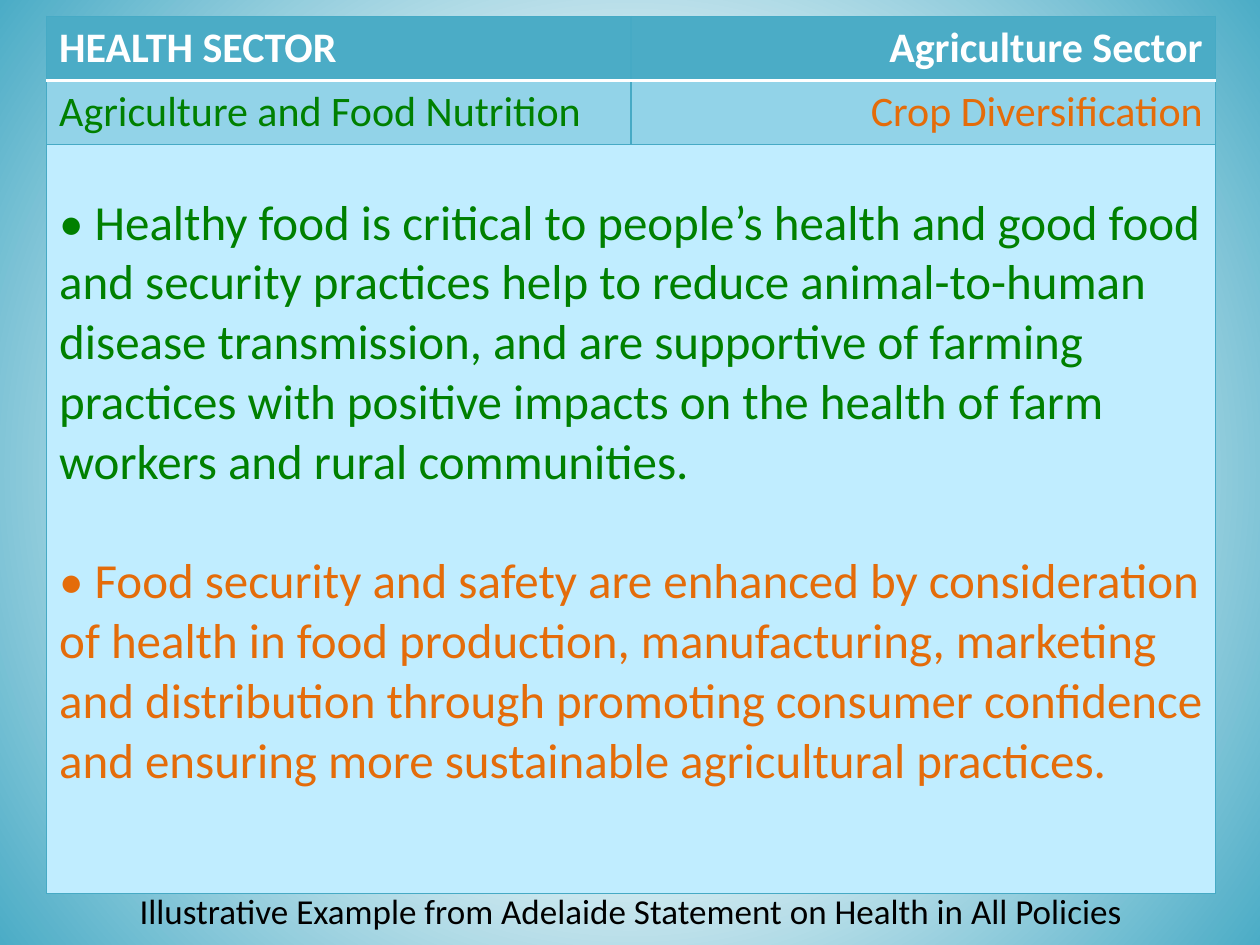
from lxml import etree
from pptx import Presentation
from pptx.dml.color import RGBColor
from pptx.enum.text import PP_ALIGN
from pptx.oxml import parse_xml
from pptx.oxml.ns import nsdecls, qn
from pptx.util import Cm, Pt

TEAL = RGBColor(0x4B, 0xAC, 0xC6)
MID_BLUE = RGBColor(0x92, 0xD3, 0xE8)
PALE_BLUE = RGBColor(0xC0, 0xED, 0xFF)
BORDER = RGBColor(0x46, 0xAA, 0xC5)
GREEN = RGBColor(0x00, 0x80, 0x00)
ORANGE = RGBColor(0xE4, 0x6C, 0x0A)
WHITE = RGBColor(0xFF, 0xFF, 0xFF)
BLACK = RGBColor(0x00, 0x00, 0x00)
FONT = "Calibri"

HEADINGS = ["HEALTH SECTOR", "Agriculture Sector"]
TOPICS = ["Agriculture and Food Nutrition", "Crop Diversification"]
POINTS = [
    "• Healthy food is critical to people’s health and good food and security "
    "practices help to reduce animal-to-human disease transmission, and are "
    "supportive of farming practices with positive impacts on the health of "
    "farm workers and rural communities.",
    "• Food security and safety are enhanced by consideration of health in food "
    "production, manufacturing, marketing and distribution through promoting "
    "consumer confidence and ensuring more sustainable agricultural practices.",
]
SECTOR_COLORS = [GREEN, ORANGE]
SECTOR_ALIGNS = [PP_ALIGN.LEFT, PP_ALIGN.RIGHT]


def add_run(p, text, size, color, bold=False, align=PP_ALIGN.LEFT):
    p.alignment = align
    r = p.add_run()
    r.text = text
    r.font.name, r.font.size, r.font.bold = FONT, Pt(size), bold
    r.font.color.rgb = color


def set_background(s):
    """Radial gradient, white in the centre and teal at the edges."""
    s.background.fill.gradient()
    grad = s.background._cSld.find(".//" + qn("a:gradFill"))
    stops = "".join(
        f'<a:gs pos="{pos * 1000}"><a:srgbClr val="{color}"/></a:gs>'
        for pos, color in [(0, WHITE), (34, WHITE), (100, TEAL)])
    grad.getparent().replace(grad, parse_xml(
        f'<a:gradFill {nsdecls("a")} rotWithShape="1"><a:gsLst>{stops}</a:gsLst>'
        '<a:path path="circle">'
        '<a:fillToRect l="50000" t="50000" r="50000" b="50000"/></a:path></a:gradFill>'))


def set_borders(cell, **special):
    """Thin border on each side, except sides given as (color, points)."""
    tcPr = cell._tc.get_or_add_tcPr()
    for i, side in enumerate("LRTB"):
        color, width = special.get(side, (BORDER, 0.75))
        ln = etree.Element(qn(f"a:ln{side}"), w=str(Pt(width)))
        fill = etree.SubElement(ln, qn("a:solidFill"))
        etree.SubElement(fill, qn("a:srgbClr"), val=str(color))
        tcPr.insert(i, ln)


def add_sector_table(s, left, top, width, row_heights):
    table = s.shapes.add_table(3, 2, left, top, width, sum(row_heights)).table
    table.first_row = table.horz_banding = False
    for col in table.columns:
        col.width = int(width / 2)
    for row, height in zip(table.rows, row_heights):
        row.height = height

    # Fills and borders, with a white rule under the header
    rule = (WHITE, 2)
    styles = [(TEAL, {"B": rule}), (MID_BLUE, {"T": rule}), (PALE_BLUE, {})]
    for row, (color, special) in zip(table.rows, styles):
        for cell in row.cells:
            cell.fill.solid()
            cell.fill.fore_color.rgb = color
            set_borders(cell, **special)

    # Header and topic rows
    for i, (color, align) in enumerate(zip(SECTOR_COLORS, SECTOR_ALIGNS)):
        add_run(table.cell(0, i).text_frame.paragraphs[0],
                HEADINGS[i], 24, WHITE, True, align)
        add_run(table.cell(1, i).text_frame.paragraphs[0],
                TOPICS[i], 24, color, align=align)

    # Merged body
    body = table.cell(2, 0)
    body.merge(table.cell(2, 1))
    body.margin_top = Cm(0.99)
    tf = body.text_frame
    for i, (text, color) in enumerate(zip(POINTS, SECTOR_COLORS)):
        p = tf.add_paragraph() if i else tf.paragraphs[0]
        if i:
            p.space_before = Pt(34)
        add_run(p, text, 28, color)


def add_caption(s, left, top, width, height):
    tf = s.shapes.add_textbox(left, top, width, height).text_frame
    tf.word_wrap = True
    add_run(tf.paragraphs[0],
            "Illustrative Example from Adelaide Statement on Health in All Policies",
            20, BLACK, align=PP_ALIGN.CENTER)


def main():
    prs = Presentation()
    prs.slide_width, prs.slide_height = Cm(25.4), Cm(19.05)
    s = prs.slides.add_slide(prs.slide_layouts[6])
    set_background(s)
    left, width = Cm(0.94), Cm(23.56)
    add_sector_table(s, left, Cm(0.33), width, [Cm(1.29), Cm(1.29), Cm(15.11)])
    add_caption(s, left, Cm(17.81), width, Cm(1.11))
    prs.save("out.pptx")


if __name__ == "__main__":
    main()
